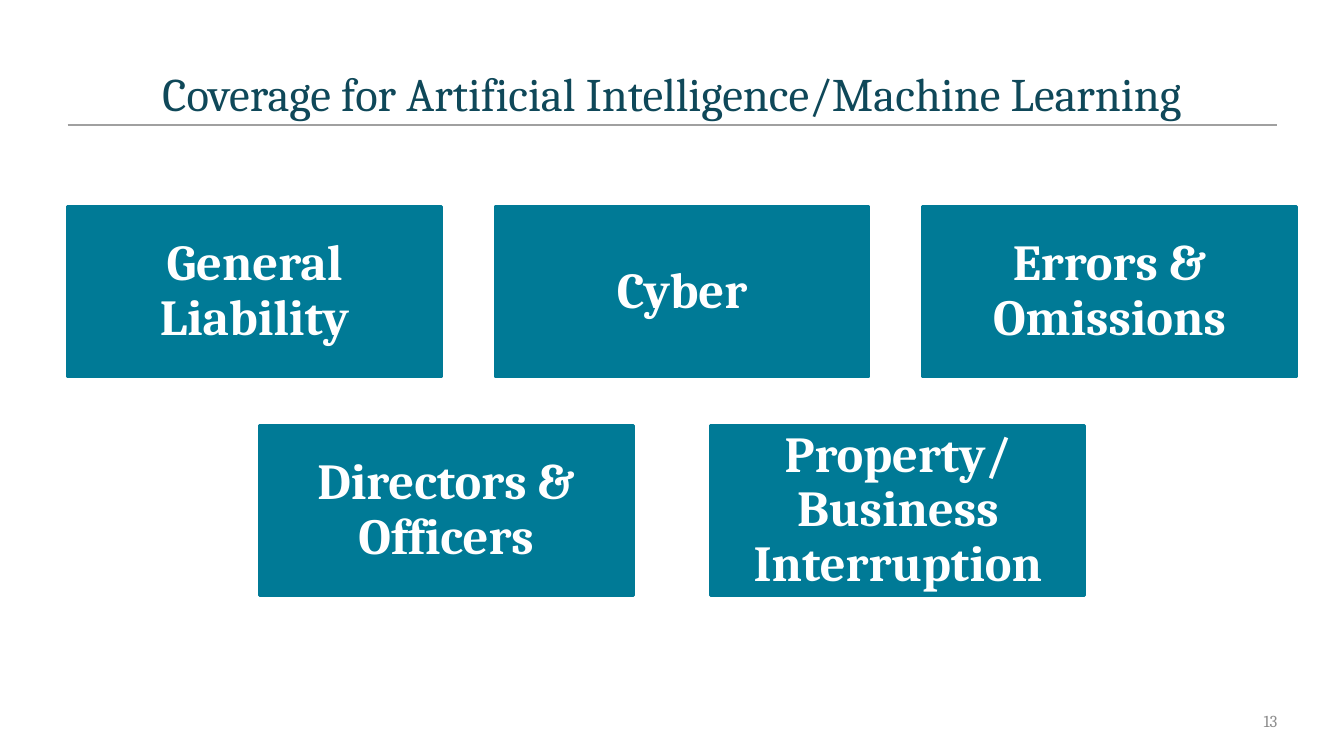
import pptx
import pptx.dml.color
import pptx.enum.shapes
import pptx.enum.text
import pptx.util
from lxml import etree

Inches = pptx.util.Inches
Align = pptx.enum.text.PP_ALIGN
Anchor = pptx.enum.text.MSO_ANCHOR

NAVY = pptx.dml.color.RGBColor(0x0F, 0x48, 0x59)
TEAL = pptx.dml.color.RGBColor(0x00, 0x7A, 0x96)
WHITE = pptx.dml.color.RGBColor(0xFF, 0xFF, 0xFF)
RULE_GRAY = pptx.dml.color.RGBColor(0xA0, 0xA0, 0xA0)
NUMBER_GRAY = pptx.dml.color.RGBColor(0x8C, 0x8C, 0x8C)

MARGIN = 0.67
CONTENT_WIDTH = 12
CARD_WIDTH, CARD_HEIGHT = 3.71, 1.69


def write_text(shape, text, size, color, alignment, anchor, insets, bold=False):
    """Fill a shape with one run; insets are left, top, right, bottom in inches."""
    frame = shape.text_frame
    frame.word_wrap = True
    frame.vertical_anchor = anchor
    frame.margin_left, frame.margin_top, frame.margin_right, frame.margin_bottom = map(Inches, insets)
    paragraph = frame.paragraphs[0]
    paragraph.alignment = alignment
    run = paragraph.add_run()
    run.text = text
    run.font.name = "Cambria"
    run.font.size = pptx.util.Pt(size)
    run.font.bold = bold
    run.font.color.rgb = color
    return paragraph


presentation = pptx.Presentation()
presentation.slide_width = Inches(13.33)
presentation.slide_height = Inches(7.5)
slide = presentation.slides.add_slide(presentation.slide_layouts[6])

# Title and the rule below it
rule = slide.shapes.add_connector(
    pptx.enum.shapes.MSO_CONNECTOR.STRAIGHT,
    Inches(MARGIN), Inches(1.24), Inches(MARGIN + CONTENT_WIDTH), Inches(1.24))
rule.line.color.rgb = RULE_GRAY
rule.line.width = pptx.util.Pt(1)
etree.SubElement(rule.element.spPr, pptx.oxml.ns.qn("a:effectLst"))

title = slide.shapes.add_textbox(Inches(MARGIN), Inches(0.58), Inches(CONTENT_WIDTH), Inches(0.67))
write_text(title, "Coverage for Artificial Intelligence/Machine Learning", 33.3, NAVY,
           Align.CENTER, Anchor.BOTTOM, (0.1, 0.05, 0.1, 0.05))

# Coverage cards: first left edge, top, column step, labels
card_rows = [
    (MARGIN, 2.05, 4.24, ["General Liability", "Cyber", "Errors & Omissions"]),
    (2.57, 4.22, 4.48, ["Directors & Officers", "Property/ Business Interruption"]),
]
for left, top, step, labels in card_rows:
    for column, label in enumerate(labels):
        card = slide.shapes.add_shape(
            pptx.enum.shapes.MSO_SHAPE.RECTANGLE,
            Inches(left + column * step), Inches(top), Inches(CARD_WIDTH), Inches(CARD_HEIGHT))
        card.shadow.inherit = False
        card.fill.solid()
        card.fill.fore_color.rgb = TEAL
        card.line.color.rgb = TEAL
        card.line.width = pptx.util.Pt(2)
        paragraph = write_text(card, label, 36, WHITE, Align.CENTER, Anchor.MIDDLE,
                               (0.16, 0.09, 0.16, 0.09), bold=True)
        paragraph.line_spacing = 0.9

# Slide number
number = slide.shapes.add_textbox(Inches(MARGIN + CONTENT_WIDTH - 3), Inches(6.95), Inches(3), Inches(0.4))
write_text(number, "13", 12, NUMBER_GRAY, Align.RIGHT, Anchor.MIDDLE, (0.1, 0.05, 0, 0.05))

presentation.save("out.pptx")
